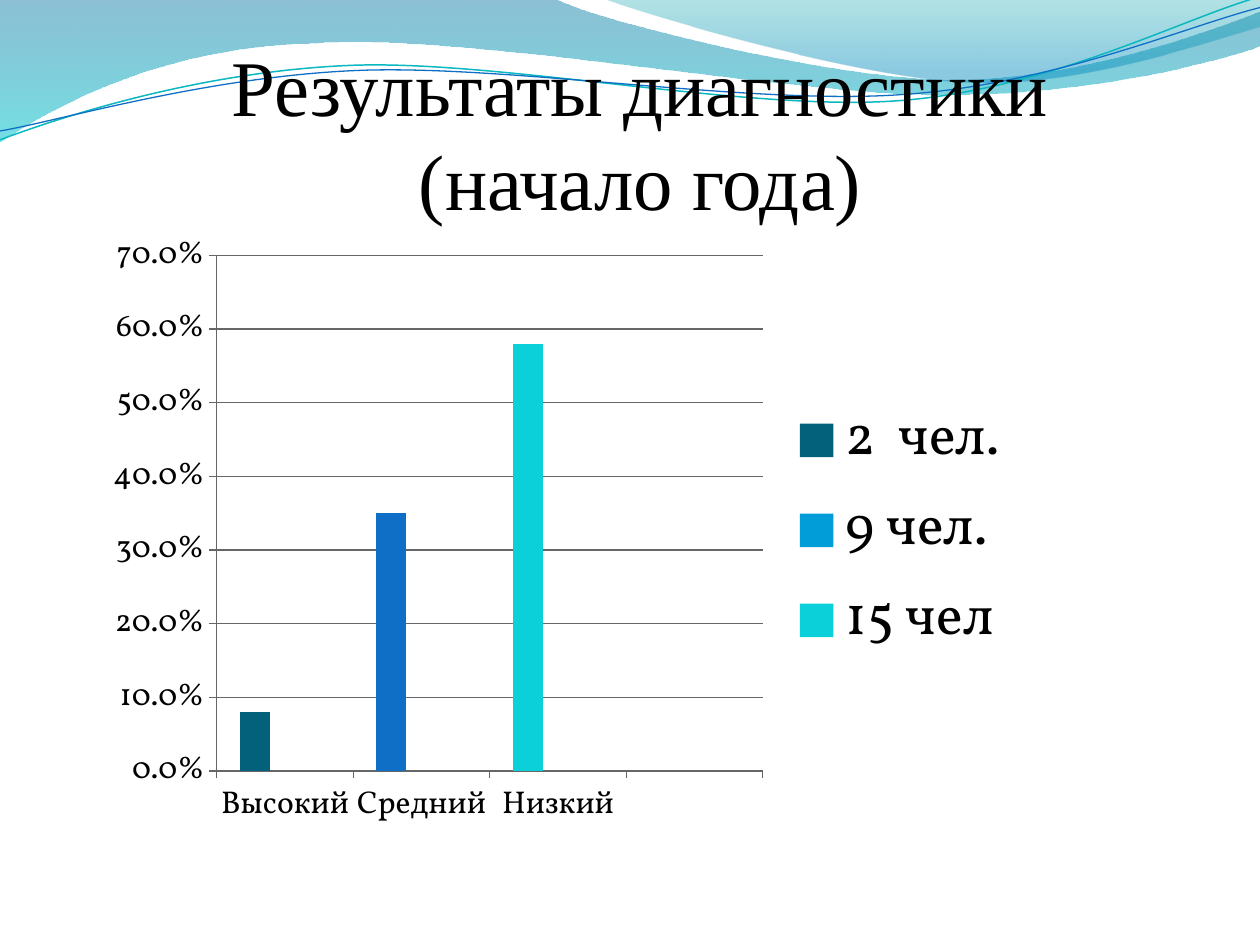
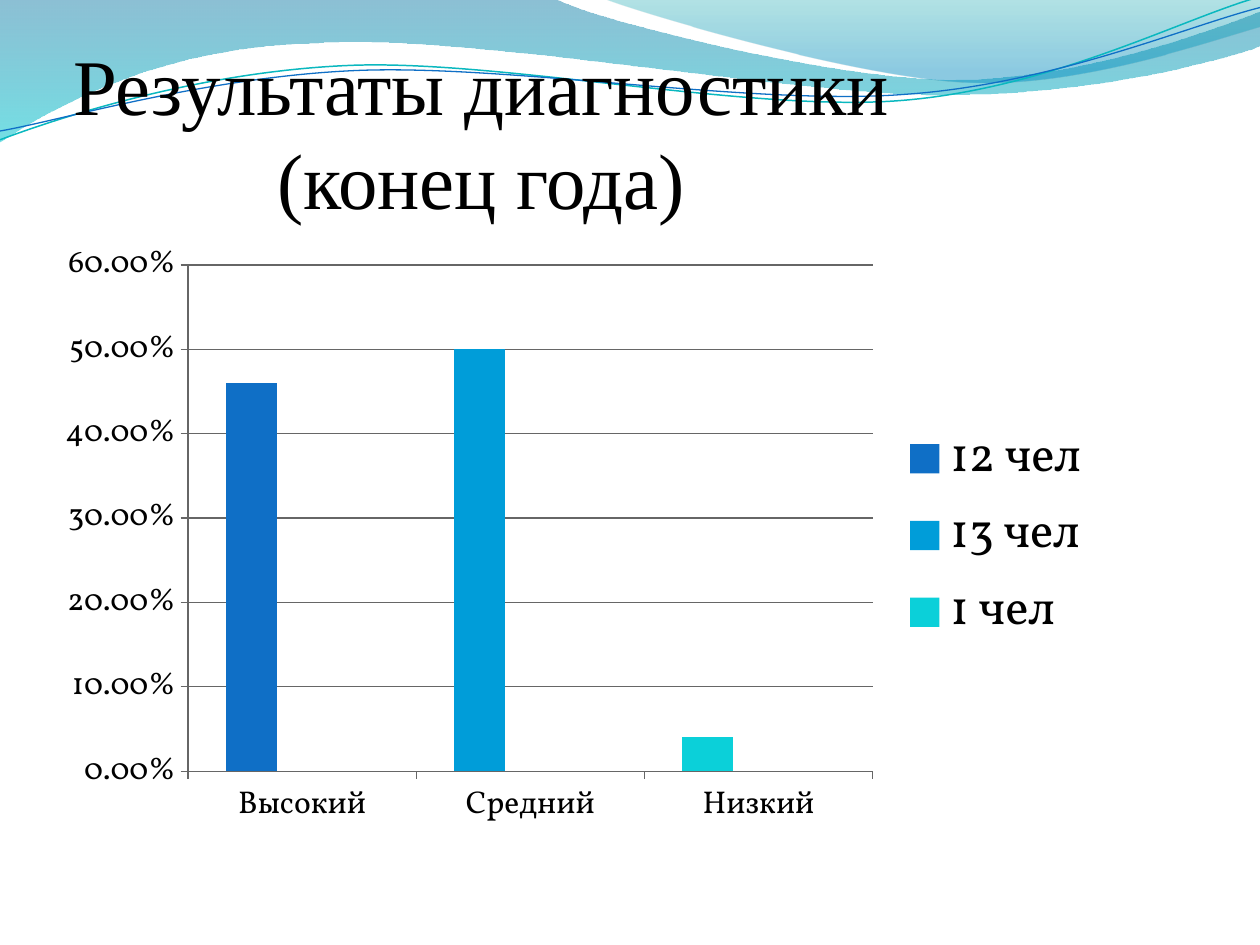
from dataclasses import dataclass

from pptx import Presentation
from pptx import util as u
from pptx.chart.data import CategoryChartData
from pptx.dml.color import RGBColor
from pptx.enum import chart as charts, text
from pptx.oxml import parse_xml
from pptx.oxml.ns import nsdecls, qn

Inches = u.Inches
COLOURS = {
    "text": "000000",
    "grid": "666666",
    "deep": "04617B",
    "blue": "0F6FC6",
    "sky": "009DD9",
    "aqua": "0BD0D9",
    "teal line": "0AB8BF",
    "band top": "0074A1",
    "band bottom": "00C6CF",
    "crest top": "00A1A9",
    "crest bottom": "008BBF",
}
TITLE_FONT, CHART_FONT = "Times New Roman", "Vollkorn"
LEVELS = ("Высокий", "Средний", "Низкий")

Point = tuple[float, float]


@dataclass(frozen=True)
class Stop:
    position: float
    colour: str
    opacity: int


@dataclass(frozen=True)
class Wave:
    """Outline pieces hold one point for a line, three for a Bezier curve."""
    start: Point
    pieces: tuple[tuple[Point, ...], ...]
    stops: tuple[Stop, ...] = ()
    line: str = ""
    width: float = 0


@dataclass(frozen=True)
class Group:
    name: str
    colour: str


@dataclass(frozen=True)
class Result:
    period: str
    title_at: Point
    chart_at: tuple[float, float, float, float]
    levels: tuple[str, ...]
    shares: tuple[float, ...]
    bar_colours: tuple[str, ...]
    groups: tuple[Group, ...]
    number_format: str
    maximum: float
    legend_size: int


WAVES = (
    Wave((0, 0), (
        ((4.4, -0.01),),
        ((4.76, 0.17), (6.64, 0.63), (7.58, 0.63)),
        ((8.53, 0.63), (9.58, 0.26), (10, 0.09)),
        ((10.01, 0.36),),
        ((9.83, 0.44), (8.7, 0.76), (7.46, 0.75)),
        ((6.22, 0.75), (3.82, 0.28), (2.57, 0.34)),
        ((1.29, 0.36), (0.46, 0.83), (-0.01, 1.13)),
        ((0, 0),),
    ), stops=(Stop(0, "band top", 45), Stop(1, "band bottom", 55))),
    Wave((4.79, -0.01), (
        ((5.09, 0.11), (6.82, 0.62), (7.69, 0.65)),
        ((8.56, 0.69), (9.61, 0.32), (10, 0.21)),
        ((10, 0),),
        ((4.79, -0.01),),
    ), stops=(Stop(0, "crest top", 30), Stop(0.8, "crest bottom", 45))),
    Wave((0, 1.11), (
        ((0.48, 0.93), (1.58, 0.57), (2.77, 0.52)),
        ((3.95, 0.47), (5.93, 0.89), (7.13, 0.8)),
        ((8.33, 0.71), (9.38, 0.15), (9.98, -0.02)),
    ), line="teal line", width=0.85),
    Wave((0, 1.04), (
        ((0.47, 0.96), (1.64, 0.61), (2.83, 0.56)),
        ((4.03, 0.51), (5.97, 0.84), (7.17, 0.75)),
        ((8.36, 0.67), (9.41, 0.21), (10, 0.06)),
    ), line="blue", width=0.75),
)

RESULTS = (
    Result("(начало года)", (1.61, 0.36), (0.75, 1.75, 7.42, 4.92),
           LEVELS + ("",), (0.08, 0.35, 0.58), ("deep", "blue", "aqua"),
           (Group("2  чел.", "deep"), Group("9 чел.", "sky"), Group("15 чел", "aqua")),
           "0.0%", 0.7, 32),
    Result("(конец года)", (0.35, 0.35), (0.35, 1.83, 8.44, 4.84),
           LEVELS, (0.46, 0.5, 0.04), ("blue", "sky", "aqua"),
           (Group("12 чел", "blue"), Group("13 чел", "sky"), Group("1 чел", "aqua")),
           "0.00%", 0.6, 28),
)


def rgb(name: str) -> RGBColor:
    return RGBColor.from_string(COLOURS[name])


def bend(shape, wave: Wave) -> None:
    """Turn each run of three line segments that stands for a curve into one."""
    segments = iter(list(shape.element.iter(qn("a:lnTo"))))
    for piece in wave.pieces:
        lines = [next(segments) for _ in piece]
        if len(lines) == 3:
            curve = parse_xml(f'<a:cubicBezTo {nsdecls("a")}/>')
            lines[0].addprevious(curve)
            for line in lines:
                curve.append(line[0])
                line.getparent().remove(line)


def draw_wave(page, wave: Wave):
    outline = [wave.start] + [point for piece in wave.pieces for point in piece]
    vertices = [(Inches(x), Inches(y)) for x, y in outline]
    builder = page.shapes.build_freeform(*vertices[0])
    builder.add_line_segments(vertices[1:], close=bool(wave.stops))
    shape = builder.convert_to_shape()
    bend(shape, wave)
    shape.shadow.inherit = False
    if wave.stops:
        shape.line.fill.background()
        shape.fill.gradient()
        shape.fill.gradient_angle = 270
        for target, stop in zip(shape.fill.gradient_stops, wave.stops):
            target.position = stop.position
            target.color.rgb = rgb(stop.colour)
        for colour, stop in zip(shape.element.spPr.iter(qn("a:srgbClr")), wave.stops):
            colour.append(parse_xml(
                f'<a:alpha {nsdecls("a")} val="{stop.opacity * 1000}"/>'))
    else:
        shape.fill.background()
        shape.line.color.rgb = rgb(wave.line)
        shape.line.width = u.Pt(wave.width)
    return shape


def put_waves_on_master(deck, page) -> None:
    """Draw the waves on a page, then move them behind everything on the master."""
    for position, wave in enumerate(WAVES, start=2):
        shape = draw_wave(page, wave)
        deck.slide_master.shapes.element.insert(position, shape.element)


def set_title(page, result: Result) -> None:
    title = page.shapes.title
    title.left, title.top = (Inches(value) for value in result.title_at)
    title.width, title.height = Inches(6.94), Inches(1.44)
    frame = title.text_frame
    frame.word_wrap = True
    frame.auto_size = text.MSO_AUTO_SIZE.NONE
    frame.vertical_anchor = text.MSO_ANCHOR.BOTTOM
    frame.margin_left = frame.margin_right = frame.margin_bottom = 0
    frame.margin_top = Inches(0.05)
    para = frame.paragraphs[0]
    para.alignment = text.PP_ALIGN.CENTER
    for index, line in enumerate(("Результаты диагностики", result.period)):
        if index:
            para.add_line_break()
        span = para.add_run()
        span.text = line
        set_font(span.font, 45, TITLE_FONT)


def set_font(font, size: int, name: str = CHART_FONT) -> None:
    font.size, font.name, font.bold = u.Pt(size), name, False
    font.color.rgb = rgb("text")


def drop_unnamed_levels(chart) -> None:
    """Leave the place of a level without a name, but give it no label."""
    for labels in list(chart.element.iter(qn("c:cat"))):
        for label in list(labels.iter(qn("c:pt"))):
            if not label.findtext(qn("c:v")):
                label.getparent().remove(label)


def add_result_chart(page, result: Result) -> None:
    data = CategoryChartData(number_format=result.number_format)
    data.categories = result.levels
    blank = (None,) * len(result.levels)
    for index, group in enumerate(result.groups):
        values = blank if index else (result.shares + blank)[:len(blank)]
        data.add_series(group.name, values)
    chart = page.shapes.add_chart(
        charts.XL_CHART_TYPE.COLUMN_CLUSTERED,
        *(Inches(value) for value in result.chart_at), data).chart
    drop_unnamed_levels(chart)
    chart.has_title = False
    set_font(chart.font, 18)
    chart.has_legend = True
    chart.legend.position = charts.XL_LEGEND_POSITION.RIGHT
    chart.legend.include_in_layout = False
    set_font(chart.legend.font, result.legend_size)

    plot = chart.plots[0]
    plot.vary_by_categories = False
    plot.gap_width, plot.overlap = 150, 0
    for series, group in zip(plot.series, result.groups):
        series.format.fill.solid()
        series.format.fill.fore_color.rgb = rgb(group.colour)
    for index, colour in enumerate(result.bar_colours):
        fill = plot.series[0].points[index].format.fill
        fill.solid()
        fill.fore_color.rgb = rgb(colour)

    scale = chart.value_axis
    scale.minimum_scale, scale.maximum_scale, scale.major_unit = 0, result.maximum, 0.1
    scale.has_major_gridlines = True
    scale.tick_labels.number_format = result.number_format
    scale.tick_labels.number_format_is_linked = False
    for axis in (scale, chart.category_axis):
        axis.major_tick_mark = charts.XL_TICK_MARK.OUTSIDE
        axis.minor_tick_mark = charts.XL_TICK_MARK.NONE
    for part in (scale, chart.category_axis, scale.major_gridlines):
        part.format.line.color.rgb = rgb("grid")
        part.format.line.width = u.Pt(0.7)


def main() -> None:
    deck = Presentation()
    deck.slide_width, deck.slide_height = Inches(10), Inches(7.5)
    title_only = deck.slide_layouts[5]
    for index, result in enumerate(RESULTS):
        page = deck.slides.add_slide(title_only)
        if index == 0:
            put_waves_on_master(deck, page)
        set_title(page, result)
        add_result_chart(page, result)
    deck.save("out.pptx")


if __name__ == "__main__":
    main()
